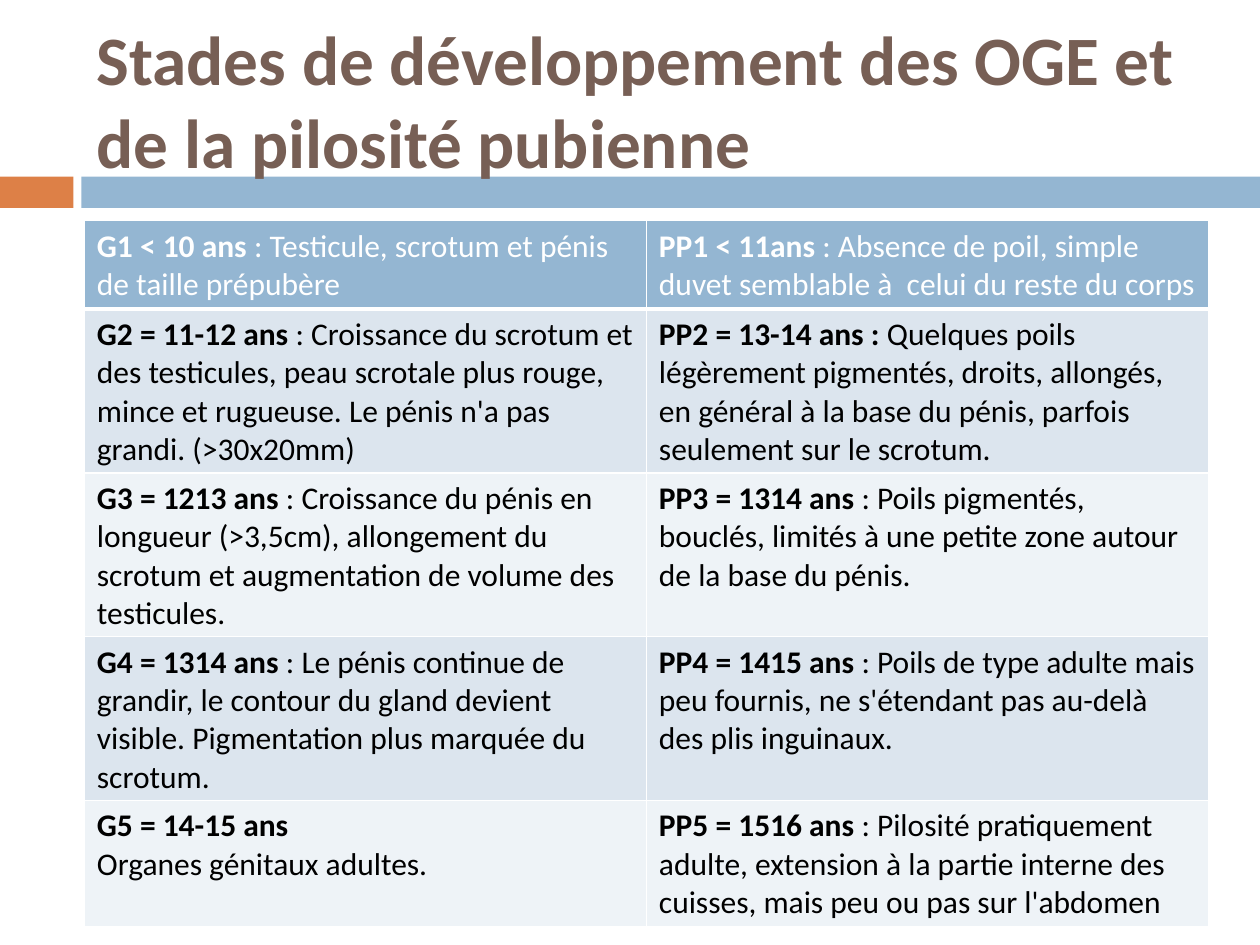
from lxml import etree
from pptx import Presentation
from pptx.dml.color import RGBColor
from pptx.enum.shapes import MSO_SHAPE
from pptx.enum.text import MSO_ANCHOR
from pptx.oxml.ns import qn
from pptx.util import Cm, Pt

RECT = MSO_SHAPE.RECTANGLE
MIDDLE = MSO_ANCHOR.MIDDLE

HUES = {
    "title": "775F55",
    "accent": "DD8047",
    "head": "94B6D2",
    "dark": "DCE5EE",
    "light": "EEF3F7",
    "white": "FFFFFF",
    "black": "000000",
}

TITLE = "Stades de développement des OGE et de la pilosité pubienne"

# Each cell is a list of paragraphs, each one a (bold, plain) pair
ROWS = [
    [[("G1 < 10 ans", " : Testicule, scrotum et pénis de taille prépubère")],
     [("PP1 < 11ans", " : Absence de poil, simple duvet semblable à  celui du reste du corps")]],
    [[("G2 = 11-12 ans", " : Croissance du scrotum et des testicules, peau scrotale plus "
       "rouge, mince et rugueuse. Le pénis n'a pas grandi. (>30x20mm)")],
     [("PP2 = 13-14 ans : ", "Quelques poils légèrement pigmentés, droits, allongés, "
       "en général à la base du pénis, parfois seulement sur le scrotum.")]],
    [[("G3 = 1213 ans", " : Croissance du pénis en longueur (>3,5cm), allongement du "
       "scrotum et augmentation de volume des testicules.")],
     [("PP3 = 1314 ans", " : Poils pigmentés, bouclés, limités à une petite zone autour "
       "de la base du pénis.")]],
    [[("G4 = 1314 ans", " : Le pénis continue de grandir, le contour du gland devient "
       "visible. Pigmentation plus marquée du scrotum.")],
     [("PP4 = 1415 ans", " : Poils de type adulte mais peu fournis, ne s'étendant pas "
       "au-delà des plis inguinaux.")]],
    [[("G5 = 14-15 ans", ""), ("", "Organes génitaux adultes.")],
     [("PP5 = 1516 ans", " : Pilosité pratiquement adulte, extension à la partie interne "
       "des cuisses, mais peu ou pas sur l'abdomen")]],
]


class Deck:
    face = "Calibri"

    def __init__(self, slide):
        self.slide = slide

    def paint(self, fill, hue):
        fill.solid()
        fill.fore_color.rgb = RGBColor.from_string(HUES[hue])

    def font(self, para, size, hue):
        para.font.name = self.face
        para.font.size = Pt(size)
        para.font.color.rgb = RGBColor.from_string(HUES[hue])

    def bar(self, x, y, w, h, hue):
        box = self.slide.shapes.add_shape(RECT, Cm(x), Cm(y), Cm(w), Cm(h))
        box.shadow.inherit = False
        self.paint(box.fill, hue)
        box.line.fill.background()

    def title(self, x, y, w, h, text, size):
        frame = self.slide.shapes.add_textbox(Cm(x), Cm(y), Cm(w), Cm(h)).text_frame
        frame.word_wrap = True
        frame.vertical_anchor = MIDDLE
        para = frame.paragraphs[0]
        para.text = text
        self.font(para, size, "title")
        para.font.bold = True

    def edges(self, cell, base):
        props = cell._tc.get_or_add_tcPr()
        widths = {"a:lnL": 1, "a:lnR": 1, "a:lnT": 1, "a:lnB": base}
        for spot, (tag, width) in enumerate(widths.items()):
            line = etree.Element(qn(tag), w=str(Pt(width)))
            fill = etree.SubElement(line, qn("a:solidFill"))
            etree.SubElement(fill, qn("a:srgbClr"), val=HUES["white"])
            props.insert(spot, line)

    def cell(self, cell, paras, ink, fill, base):
        frame = cell.text_frame
        for num, (bold, plain) in enumerate(paras):
            para = frame.add_paragraph() if num else frame.paragraphs[0]
            self.font(para, 18, ink)
            for text, heavy in ((bold, True), (plain, False)):
                if text:
                    run = para.add_run()
                    run.text = text
                    run.font.bold = heavy
        self.paint(cell.fill, fill)
        self.edges(cell, base)

    def table(self, x, y, w, row_h, rows):
        grid = self.slide.shapes.add_table(
            len(rows), len(rows[0]), Cm(x), Cm(y), Cm(w), Cm(row_h * len(rows))).table
        for r, row in enumerate(rows):
            if r == 0:
                look = ("white", "head", 3)
            else:
                look = ("black", "dark" if r % 2 else "light", 1)
            for c, paras in enumerate(row):
                self.cell(grid.cell(r, c), paras, *look)


def main():
    prs = Presentation()
    prs.slide_width, prs.slide_height = Cm(25.4), Cm(19.05)
    deck = Deck(prs.slides.add_slide(prs.slide_layouts[6]))

    # Band under the title
    deck.bar(0, 3.56, 1.48, 0.63, "accent")
    deck.bar(1.64, 3.56, 23.76, 0.63, "head")

    # Title
    deck.title(1.7, 0.64, 22.66, 2.74, TITLE, 39.6)

    # Table of stages; rows grow to fit their text
    deck.table(1.7, 4.45, 22.66, 1.03, ROWS)

    prs.save("out.pptx")


if __name__ == "__main__":
    main()
